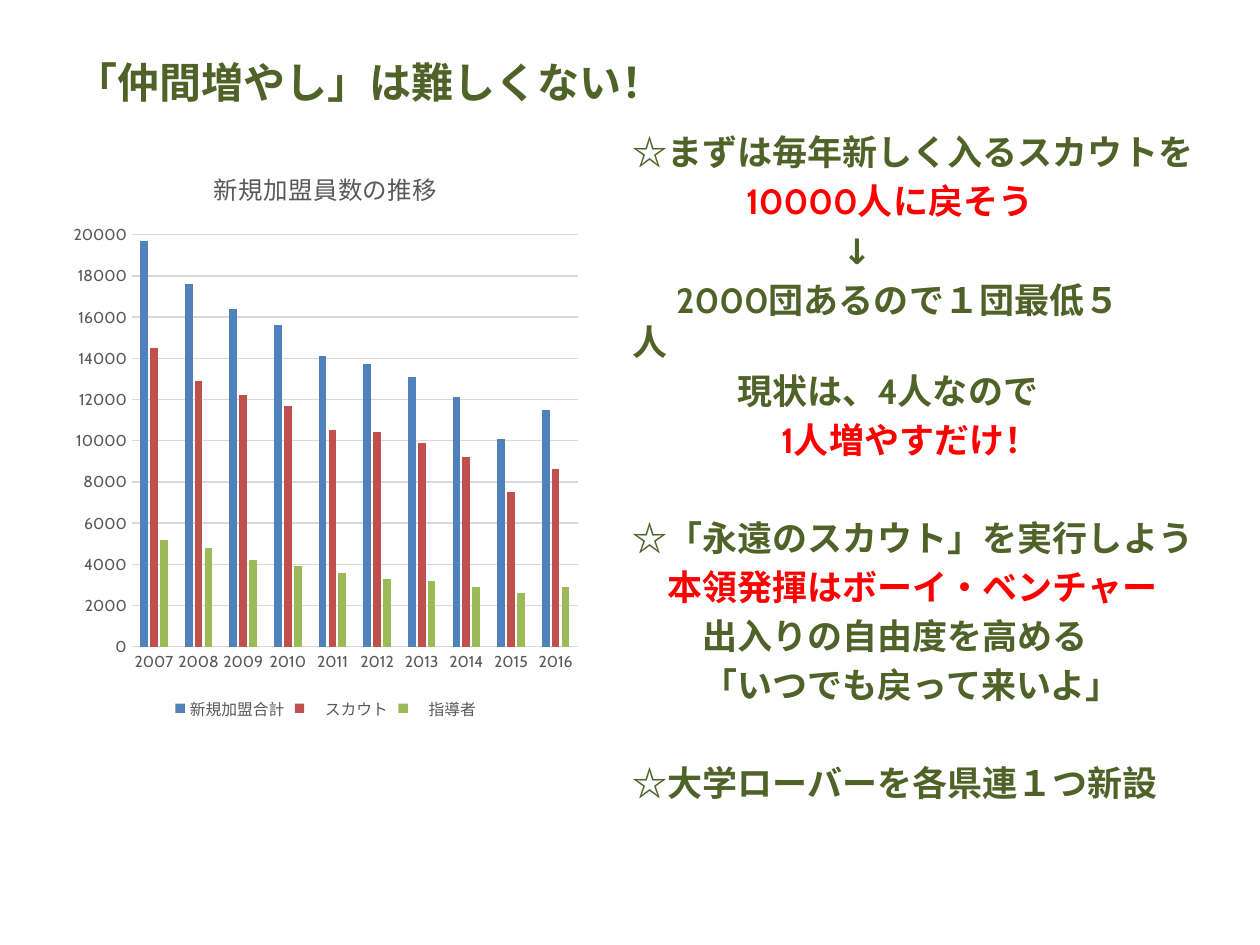
import pptx
import pptx.util
import pptx.chart.data
from dataclasses import dataclass
from lxml import etree
from pptx.dml.color import RGBColor
from pptx.enum.chart import XL_CHART_TYPE, XL_LEGEND_POSITION, XL_TICK_MARK
from pptx.enum.text import MSO_ANCHOR
from pptx.oxml.ns import qn
from pptx.util import Inches, Pt

FONT = "Cabin"
GREEN = RGBColor(0x4F, 0x62, 0x28)
RED = RGBColor(0xFF, 0x00, 0x00)
GREY = RGBColor(0x59, 0x59, 0x59)
PALE = RGBColor(0xD9, 0xD9, 0xD9)
EM = 20 / 72  # one full-width character of body text, in inches


@dataclass
class Line:
    text: str
    dent: float = 0  # first-line indent in full-width characters
    color: RGBColor = GREEN
    gap: float = 4  # space before, in points


@dataclass
class Series:
    name: str
    color: RGBColor
    vals: list[int]


LINES = [
    Line("☆まずは毎年新しく入るスカウトを", gap=0),
    Line("10000人に戻そう", 3.25, RED),
    Line("↓", 6),
    Line("2000団あるので１団最低５\v人", 1.25),
    Line("現状は、4人なので", 3),
    Line("1人増やすだけ！", 4.25, RED),
    Line("☆「永遠のスカウト」を実行しよう", gap=32),
    Line("本領発揮はボーイ・ベンチャー", 1, RED),
    Line("出入りの自由度を高める", 2),
    Line("「いつでも戻って来いよ」", 2),
    Line("☆大学ローバーを各県連１つ新設", gap=32),
]

SERIES = [
    Series("新規加盟合計", RGBColor(0x4F, 0x81, 0xBD),
           [19700, 17600, 16400, 15600, 14100, 13700, 13100, 12100, 10100, 11500]),
    Series("　スカウト", RGBColor(0xC0, 0x50, 0x4D),
           [14500, 12900, 12200, 11700, 10500, 10400, 9900, 9200, 7500, 8600]),
    Series("　指導者", RGBColor(0x9B, 0xBB, 0x59),
           [5200, 4800, 4200, 3900, 3600, 3300, 3200, 2900, 2600, 2900]),
]


def style(font, size: float, color: RGBColor, bold: bool = False) -> None:
    font.name = FONT
    font.size = Pt(size)
    font.bold = bold
    font.color.rgb = color


def add_text(slide, left: float, top: float, width: float, height: float,
             lines: list[Line], size: float, anchor=MSO_ANCHOR.TOP) -> None:
    box = slide.shapes.add_textbox(
        Inches(left), Inches(top), Inches(width), Inches(height))
    frame = box.text_frame
    frame.word_wrap = True
    frame.vertical_anchor = anchor
    for i, line in enumerate(lines):
        para = frame.paragraphs[0] if i == 0 else frame.add_paragraph()
        para.text = line.text
        para.space_before = Pt(line.gap)
        style(para.font, size, line.color, True)
        props = para._p.get_or_add_pPr()
        props.set("marL", "0")
        props.set("indent", str(Inches(line.dent * EM)))
        # East Asian letters use the same font
        base = props.find(qn("a:defRPr"))
        etree.SubElement(base, qn("a:ea")).set("typeface", FONT)


def add_graph(slide) -> None:
    data = pptx.chart.data.CategoryChartData()
    data.categories = [str(year) for year in range(2007, 2017)]
    for item in SERIES:
        data.add_series(item.name, item.vals)
    chart = slide.shapes.add_chart(
        XL_CHART_TYPE.COLUMN_CLUSTERED, Inches(0.5), Inches(1.15),
        Inches(4.17), Inches(4.6), data).chart
    style(chart.font, 9, GREY)

    # Title and legend
    chart.has_title = True
    title = chart.chart_title.text_frame
    title.text = "新規加盟員数の推移"
    style(title.paragraphs[0].font, 14, GREY)
    chart.has_legend = True
    chart.legend.position = XL_LEGEND_POSITION.BOTTOM
    chart.legend.include_in_layout = False
    style(chart.legend.font, 9, GREY)

    # Axes
    cat, val = chart.category_axis, chart.value_axis
    for axis in (cat, val):
        axis.major_tick_mark = XL_TICK_MARK.NONE
        axis.minor_tick_mark = XL_TICK_MARK.NONE
        style(axis.tick_labels.font, 9, GREY)
    val.minimum_scale, val.maximum_scale, val.major_unit = 0, 20000, 2000
    val.has_major_gridlines = True
    val.format.line.fill.background()
    for rule in (cat.format.line, val.major_gridlines.format.line):
        rule.color.rgb = PALE
        rule.width = Pt(0.75)

    # Columns
    plot = chart.plots[0]
    plot.vary_by_categories = False
    plot.gap_width, plot.overlap = 219, -27
    for bars, item in zip(plot.series, SERIES):
        bars.format.fill.solid()
        bars.format.fill.fore_color.rgb = item.color


def main() -> None:
    deck = pptx.Presentation()
    deck.slide_width, deck.slide_height = Inches(10), Inches(7.5)
    slide = deck.slides.add_slide(deck.slide_layouts[6])
    add_text(slide, 4.92, 0.99, 4.66, 4.91, LINES, 20)
    head = [Line("「仲間増やし」は難しくない！", gap=0)]
    add_text(slide, 0.5, 0.3, 9, 0.69, head, 24, MSO_ANCHOR.MIDDLE)
    add_graph(slide)
    deck.save("out.pptx")


if __name__ == "__main__":
    main()
